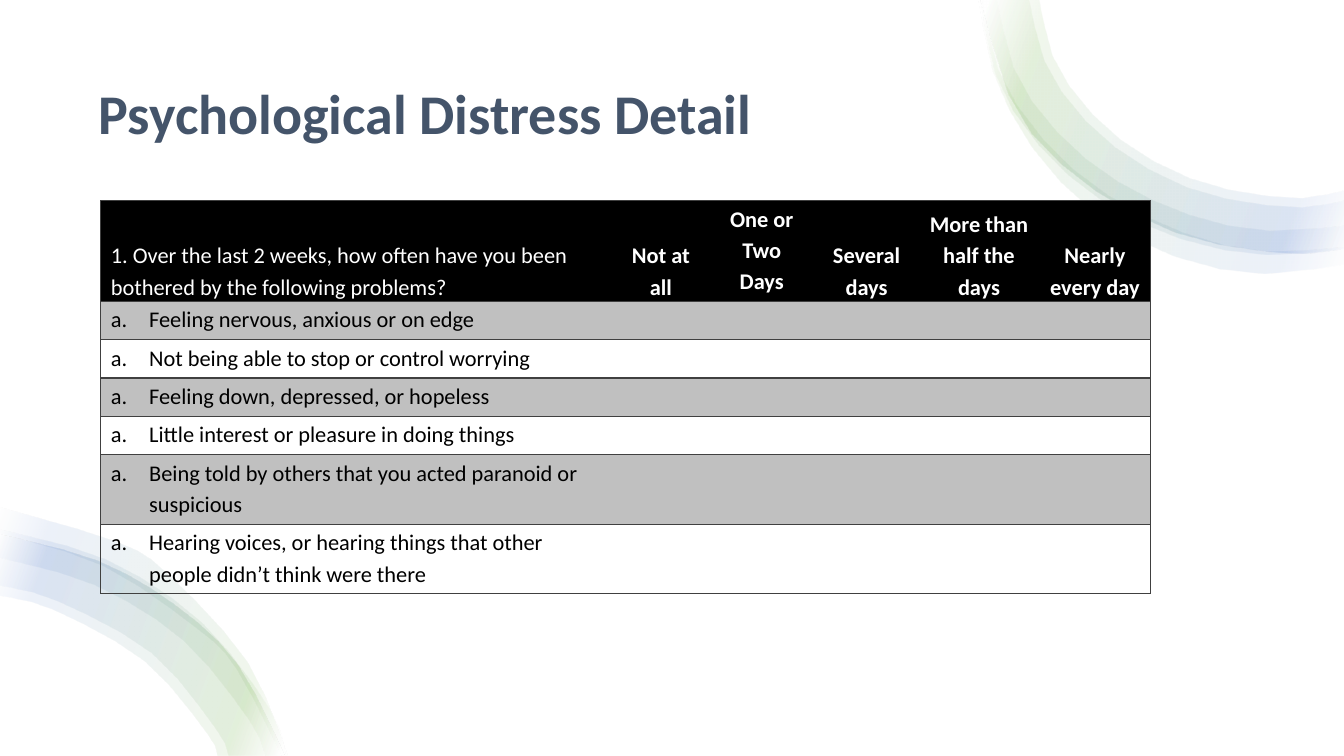
"""Build the Psychological Distress Detail slide with its question table."""
from dataclasses import dataclass

from lxml.etree import SubElement
from pptx import Presentation
from pptx.dml.color import RGBColor
from pptx.enum.text import MSO_ANCHOR, PP_ALIGN
from pptx.oxml import parse_xml
from pptx.oxml.ns import nsdecls, qn
from pptx.slide import Slide
from pptx.table import Table, _Cell
from pptx.text.text import _Paragraph
from pptx.util import Inches, Pt

FONT = "Calibri"
COLORS = {"title": "44546A", "header": "000000", "header_text": "FFFFFF", "text": "000000",
          "stripe": "C0C0C0", "border": "404040", "glow": "FFFFFF", "green": "70AD47", "blue": "4472C4"}
GRADIENT = ((2, "glow"), (16, "green"), (85, "blue"), (100, "glow"))
Points = list[tuple[float, float]]


@dataclass
class Band:
    """A translucent ribbon between an outer edge and a returning inner edge."""
    outer: Points
    inner: Points


@dataclass
class Swirl:
    """A corner decoration made of overlapping bands."""
    angle: int
    bands: list[Band]


@dataclass
class Column:
    """A table column with its heading."""
    heading: str
    width: float
    anchor: MSO_ANCHOR = MSO_ANCHOR.BOTTOM


@dataclass
class Question:
    """A table row with its wording."""
    wording: str
    height: float = 0.38


TOP_OUTER = [(9.73, -0.01), (10.09, 1.11), (10.8, 1.84), (11.74, 2.33), (12.79, 2.51), (13.34, 2.45)]
BOTTOM_OUTER = [(2.82, 7.5), (2.35, 6.59), (1.73, 6.0), (0.96, 5.56), (0, 5.3)]
SWIRLS = [
    Swirl(20, [
        Band(TOP_OUTER, [(13.34, 1.88), (12.79, 1.96), (11.87, 1.79), (11.06, 1.34), (10.5, 0.68), (10.31, -0.01)]),
        Band(TOP_OUTER, [(13.34, 1.98), (12.79, 2.05), (11.84, 1.88), (11, 1.41), (10.42, 0.73), (10.21, -0.01)]),
        Band([(9.73, -0.01), (9.94, 0.89), (10.54, 1.68), (11.39, 2.24), (12.39, 2.51), (13.34, 2.46)],
             [(13.34, 2.23), (12.42, 2.27), (11.5, 2.01), (10.71, 1.52), (10.12, 0.81), (9.89, -0.01)]),
        Band([(9.71, -0.01), (9.91, 0.87), (10.46, 1.74), (11.31, 2.4), (12.36, 2.71), (13.34, 2.62)],
             [(13.34, 2.45), (12.39, 2.48), (11.43, 2.18), (10.59, 1.63), (9.97, 0.84), (9.74, -0.01)]),
    ]),
    Swirl(200, [
        Band([(2.85, 7.5), (2.45, 6.57), (1.66, 5.7), (1.15, 5.38), (0, 5.04)],
             [(0, 5.3), (1.02, 5.62), (1.95, 6.24), (2.34, 6.64), (2.79, 7.5)]),
        Band(BOTTOM_OUTER, [(0, 5.91), (0.53, 6.05), (1.43, 6.56), (2.05, 7.28), (2.15, 7.5)]),
        Band([(2.83, 7.5), (2.68, 7.05), (2, 6.18), (1.06, 5.56), (0, 5.26)],
             [(0, 5.54), (0.94, 5.81), (1.82, 6.36), (2.47, 7.15), (2.63, 7.5)]),
        Band(BOTTOM_OUTER, [(0, 5.81), (0.56, 5.96), (1.5, 6.48), (2.14, 7.24), (2.26, 7.5)]),
    ]),
]
COLUMNS = [
    Column("1. Over the last 2 weeks, how often have you been bothered by the following problems?", 5.08),
    Column("Not at all", 0.95),
    Column("One or Two Days", 1.05, MSO_ANCHOR.TOP),
    Column("Several days", 1.03),
    Column("More than half the days", 1.2),
    Column("Nearly every day", 1.1),
]
QUESTIONS = [
    Question("Feeling nervous, anxious or on edge"),
    Question("Not being able to stop or control worrying"),
    Question("Feeling down, depressed, or hopeless"),
    Question("Little interest or pleasure in doing things"),
    Question("Being told by others that you acted paranoid or suspicious", 0.69),
    Question("Hearing voices, or hearing things that other people didn’t think were there", 0.69),
]
HEADER_HEIGHT = 1.0


def color(name: str) -> RGBColor:
    return RGBColor.from_string(COLORS[name])


def smooth_edge(knots: Points, segments: int = 12) -> Points:
    padded = [knots[0], *knots, knots[-1]]
    edge = [knots[0]]
    for step in range(1, segments):
        position = step * (len(knots) - 1) / segments
        index = int(position)
        t = position - index
        edge.append(tuple(
            b + t * (c - a) / 2 + t**2 * (2 * a - 5 * b + 4 * c - d) / 2 + t**3 * (3 * b - a - 3 * c + d) / 2
            for a, b, c, d in zip(*padded[index:index + 4])))
    return edge + [knots[-1]]


def draw_band(page: Slide, band: Band, angle: int) -> None:
    outline = [(Inches(x), Inches(y)) for x, y in smooth_edge(band.outer) + smooth_edge(band.inner)]
    builder = page.shapes.build_freeform(*outline[0])
    builder.add_line_segments(outline[1:], close=True)
    ribbon = builder.convert_to_shape()
    ribbon.shadow.inherit = False
    ribbon.line.fill.background()
    stops = "".join(
        f'<a:gs pos="{position * 1000}"><a:srgbClr val="{COLORS[name]}"><a:alpha val="10000"/></a:srgbClr></a:gs>'
        for position, name in GRADIENT)
    gradient = parse_xml(f'<a:gradFill {nsdecls("a")}><a:gsLst>{stops}</a:gsLst>'
                         f'<a:lin ang="{angle * 60000}" scaled="0"/></a:gradFill>')
    ribbon.element.spPr.find(qn("a:custGeom")).addnext(gradient)


def style_spans(paragraph: _Paragraph, size: int, color_name: str, bold: bool) -> None:
    for span in paragraph.runs:
        span.font.name, span.font.size, span.font.bold = FONT, Pt(size), bold
        span.font.color.rgb = color(color_name)


def style_cell(cell: _Cell, fill: str | None, left: bool, right: bool) -> None:
    cell.margin_left = cell.margin_right = Inches(0.1)
    cell.margin_top, cell.margin_bottom = Inches(0.01), 0
    properties = cell._tc.get_or_add_tcPr()
    for side, visible in (("L", left), ("R", right), ("T", True), ("B", True)):
        border = SubElement(properties, qn(f"a:ln{side}"), w=str(Pt(1)))
        if visible:
            SubElement(SubElement(border, qn("a:solidFill")), qn("a:srgbClr"), val=COLORS["border"])
        else:
            SubElement(border, qn("a:noFill"))
    if fill:
        cell.fill.solid()
        cell.fill.fore_color.rgb = color(fill)
    else:
        cell.fill.background()


def write_cell(cell: _Cell, text: str, color_name: str, bold: bool = False) -> _Paragraph:
    cell.text_frame.text = text
    paragraph = cell.text_frame.paragraphs[0]
    paragraph.line_spacing = 1.15
    style_spans(paragraph, 16, color_name, bold)
    return paragraph


def fill_table(table: Table) -> None:
    table.first_row = table.horz_banding = False
    last = len(COLUMNS) - 1
    heights = [HEADER_HEIGHT] + [question.height for question in QUESTIONS]
    for row, height in enumerate(heights):
        table.rows[row].height = Inches(height)
        fill = "header" if row == 0 else "stripe" if row % 2 else None
        for column in range(last + 1):
            style_cell(table.cell(row, column), fill, column == 0, column == last)
    for index, column in enumerate(COLUMNS):
        table.columns[index].width = Inches(column.width)
        cell = table.cell(0, index)
        cell.vertical_anchor = column.anchor
        paragraph = write_cell(cell, column.heading, "header_text", bold=index > 0)
        paragraph.alignment = PP_ALIGN.CENTER if index else PP_ALIGN.LEFT
    for row, question in enumerate(QUESTIONS, 1):
        paragraph = write_cell(table.cell(row, 0), question.wording, "text")
        properties = paragraph._p.get_or_add_pPr()
        properties.set("marL", str(Inches(0.38)))
        properties.set("indent", str(-Inches(0.38)))
        SubElement(properties, qn("a:buAutoNum"), type="alphaLcPeriod")


def main() -> None:
    deck = Presentation()
    deck.slide_width, deck.slide_height = Inches(13.33), Inches(7.5)
    page = deck.slides.add_slide(deck.slide_layouts[6])
    for swirl in SWIRLS:
        for band in swirl.bands:
            draw_band(page, band, swirl.angle)
    box = page.shapes.add_textbox(Inches(0.88), Inches(0.5), Inches(11.57), Inches(1.3))
    box.text_frame.word_wrap = True
    box.text_frame.vertical_anchor = MSO_ANCHOR.MIDDLE
    box.text_frame.text = "Psychological Distress Detail"
    title = box.text_frame.paragraphs[0]
    title.line_spacing = 0.9
    style_spans(title, 40, "title", True)
    frame = page.shapes.add_table(len(QUESTIONS) + 1, len(COLUMNS), Inches(1), Inches(1.99), Inches(10.41), Inches(3.9))
    fill_table(frame.table)
    deck.save("out.pptx")


if __name__ == "__main__":
    main()
